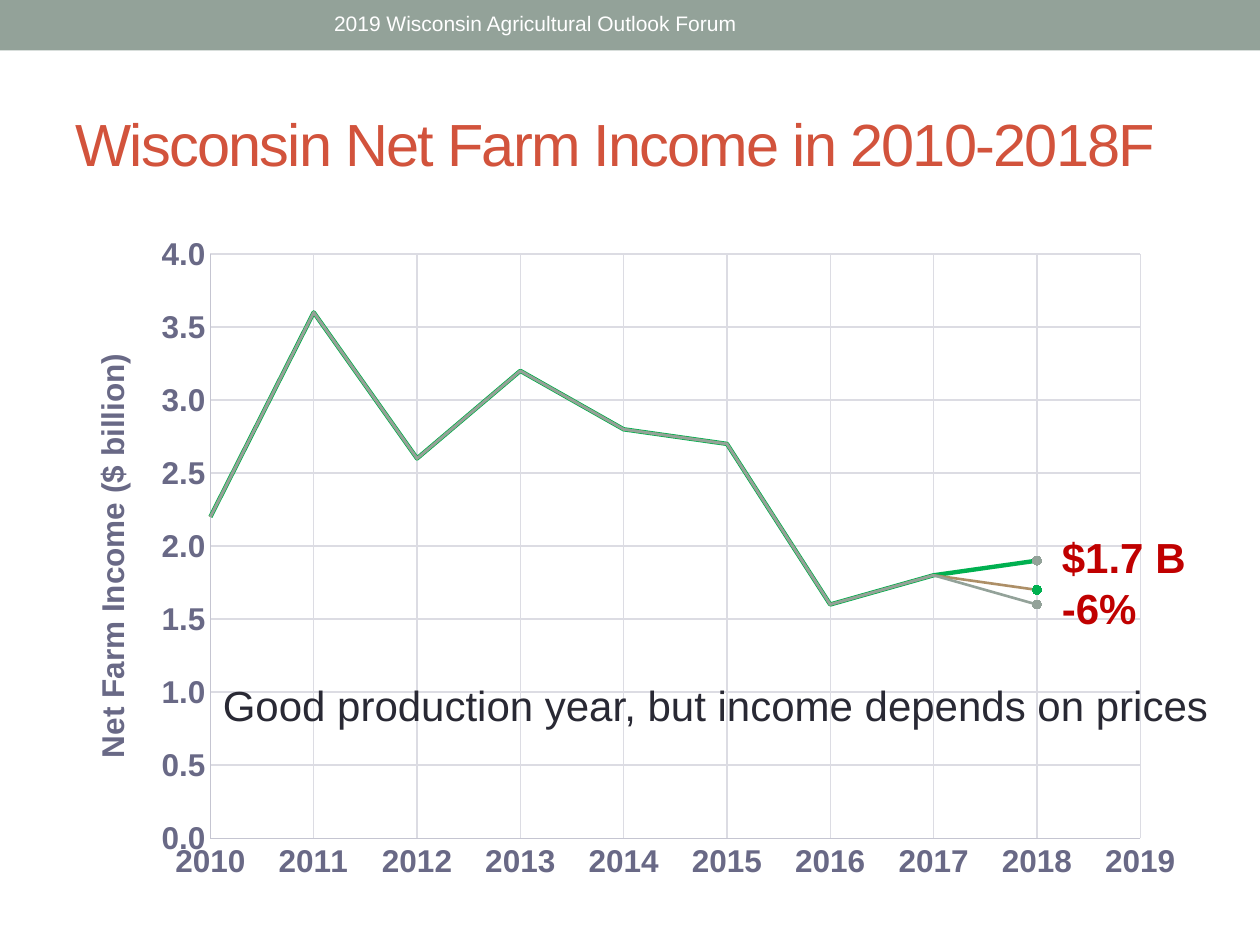
from dataclasses import dataclass

import pptx
import pptx.chart.data
import pptx.enum.chart
import pptx.enum.shapes
import pptx.enum.text
import pptx.oxml
import pptx.oxml.ns
from pptx.dml.color import RGBColor
from pptx.util import Inches

Pt = pptx.util.Pt
ALIGN = pptx.enum.text.PP_ALIGN
ANCHOR = pptx.enum.text.MSO_ANCHOR


@dataclass(frozen=True)
class Theme:
    font: str = "Arial"
    band: str = "93A299"
    title: str = "D2533C"
    text: str = "292934"
    alert: str = "C00000"
    white: str = "FFFFFF"
    axis: str = "696986"
    rule: str = "C5C5D1"
    grid: str = "DCDCE3"
    tan: str = "AD8F67"
    green: str = "00B050"
    head_size: int = 34
    note_size: int = 24
    axis_size: int = 18
    top_size: int = 12


THEME = Theme()


@dataclass(frozen=True)
class Label:
    lines: tuple[str, ...]
    box: tuple[float, float, float, float]
    size: int
    color: str
    bold: bool = False
    middle: bool = False
    center: bool = False
    right: float = 0.1
    track: int = 0


@dataclass(frozen=True)
class Case:
    name: str
    last: float
    color: str
    width: float
    dot: str


LABELS = (
    Label(("Wisconsin Net Farm Income in 2010-2018F",), (0.5, 0.59, 9, 1.08),
          THEME.head_size, THEME.title, middle=True, track=-100),
    Label(("$1.7 B", "-6%"), (8.33, 4.17, 1.5, 0.91),
          THEME.note_size, THEME.alert, bold=True),
    Label(("Good production year, but income depends on prices",),
          (1.67, 5.34, 8.07, 0.5), THEME.note_size, THEME.text),
    Label(("2019 Wisconsin Agricultural Outlook Forum",), (2.49, 0, 4.5, 0.36),
          THEME.top_size, THEME.white, middle=True, center=True, right=1.08),
)
START = 2010
PAST = (2.2, 3.6, 2.6, 3.2, 2.8, 2.7, 1.6, 1.8)
CASES = (
    Case("Series 1", 1.6, THEME.band, 1.5, THEME.band),
    Case("Series 2", 1.7, THEME.tan, 1.5, THEME.green),
    Case("Series 3", 1.9, THEME.green, 2.5, THEME.band),
)


def rgb(code: str) -> RGBColor:
    return RGBColor.from_string(code)


def style(font, size: int, color: str, bold: bool = False) -> None:
    font.name, font.size, font.bold = THEME.font, Pt(size), bold
    font.color.rgb = rgb(color)


def stroke(line, color: str, width: float) -> None:
    line.color.rgb, line.width = rgb(color), Pt(width)


def place(parent, **parts: float) -> None:
    """Fix the place of a chart part, as shares of the chart's size."""
    for old in parent.findall(pptx.oxml.ns.qn("c:layout")):
        parent.remove(old)
    inner = '<c:layoutTarget val="inner"/>' if "w" in parts else ""
    modes = "".join(f'<c:{k}Mode val="edge"/>' for k in parts if k in "xy")
    sizes = "".join(f'<c:{k} val="{v}"/>' for k, v in parts.items())
    node = pptx.oxml.parse_xml(
        f'<c:layout {pptx.oxml.ns.nsdecls("c")}><c:manualLayout>'
        f"{inner}{modes}{sizes}</c:manualLayout></c:layout>")
    text = parent.find(pptx.oxml.ns.qn("c:tx"))
    parent.insert(0 if text is None else 1, node)


def add_label(slide, label: Label) -> None:
    frame = slide.shapes.add_textbox(*map(Inches, label.box)).text_frame
    frame.word_wrap = True
    frame.margin_right = Inches(label.right)
    frame.vertical_anchor = ANCHOR.MIDDLE if label.middle else ANCHOR.TOP
    frame.text = "\n".join(label.lines)
    for para in frame.paragraphs:
        style(para.font, label.size, label.color, label.bold)
        para.alignment = ALIGN.CENTER if label.center else ALIGN.LEFT
        if label.track:
            for run in para.runs:
                run.font._element.set("spc", str(label.track))


def set_axis(axis, low: float, high: float, step: float, form: str) -> None:
    axis.minimum_scale, axis.maximum_scale, axis.major_unit = low, high, step
    axis.major_tick_mark = axis.minor_tick_mark = pptx.enum.chart.XL_TICK_MARK.NONE
    axis.has_major_gridlines = True
    stroke(axis.major_gridlines.format.line, THEME.grid, 0.75)
    stroke(axis.format.line, THEME.rule, 0.75)
    style(axis.tick_labels.font, THEME.axis_size, THEME.axis, True)
    axis.tick_labels.number_format = form
    axis.tick_labels.number_format_is_linked = False


def style_case(series, case: Case) -> None:
    kind = pptx.enum.chart.XL_MARKER_STYLE
    series.smooth = False
    stroke(series.format.line, case.color, case.width)
    series.marker.style = kind.NONE
    point = series.points[len(PAST)]
    stroke(point.format.line, case.dot, case.width)
    point.marker.style, point.marker.size = kind.CIRCLE, 5
    point.marker.format.fill.solid()
    point.marker.format.fill.fore_color.rgb = rgb(case.dot)
    stroke(point.marker.format.line, case.dot, 0.75)


def add_plot(slide) -> None:
    data = pptx.chart.data.XyChartData()
    for case in CASES:
        series = data.add_series(case.name)
        for year, value in enumerate((*PAST, case.last), START):
            series.add_data_point(year, value)
    chart = slide.shapes.add_chart(
        pptx.enum.chart.XL_CHART_TYPE.XY_SCATTER_LINES_NO_MARKERS,
        Inches(0.5), Inches(1.75), Inches(9), Inches(5.33), data).chart
    chart.has_legend = chart.has_title = False
    style(chart.font, THEME.axis_size, THEME.text, True)
    plot = chart.plots[0]
    plot.vary_by_categories = False
    for series, case in zip(plot.series, CASES):
        style_case(series, case)
    set_axis(chart.category_axis, START, START + 9, 1, "0")
    set_axis(chart.value_axis, 0, 4, 0.5, "0.0")
    title = chart.value_axis.axis_title
    title.text_frame.text = "Net Farm Income ($ billion)"
    style(title.text_frame.paragraphs[0].font, THEME.axis_size, THEME.axis, True)
    place(title._element, x=0.02, y=0.19)
    area = chart._chartSpace.chart.plotArea
    place(area, x=0.13, y=0.05, w=0.82, h=0.87)


def main() -> None:
    deck = pptx.Presentation()
    deck.slide_width, deck.slide_height = Inches(10), Inches(7.5)
    slide = deck.slides.add_slide(deck.slide_layouts[6])
    band = slide.shapes.add_shape(
        pptx.enum.shapes.MSO_SHAPE.RECTANGLE, 0, 0, deck.slide_width, Inches(0.4))
    band.shadow.inherit = False
    band.fill.solid()
    band.fill.fore_color.rgb = rgb(THEME.band)
    band.line.fill.background()
    add_plot(slide)
    for label in LABELS:
        add_label(slide, label)
    deck.save("out.pptx")


if __name__ == "__main__":
    main()
